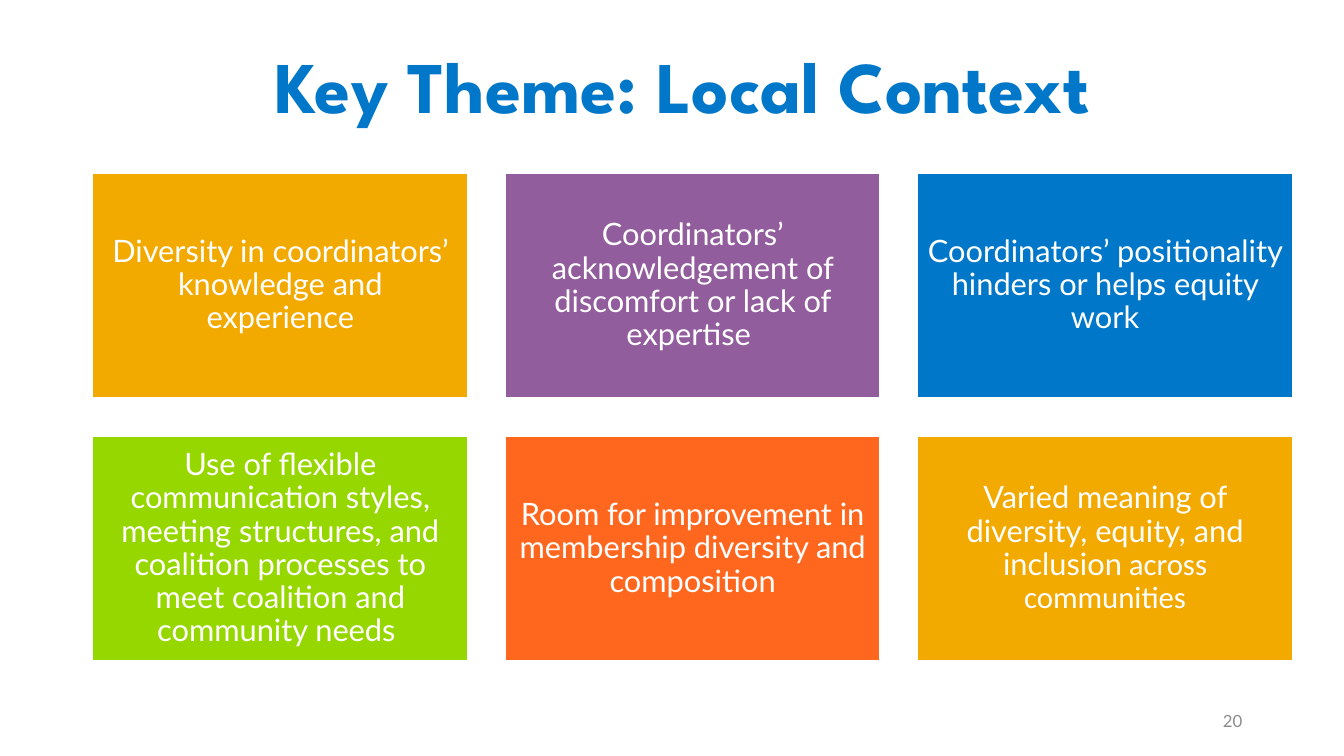
from pptx import Presentation
from pptx.dml.color import RGBColor
from pptx.enum.shapes import MSO_SHAPE
from pptx.enum.text import MSO_ANCHOR, PP_ALIGN
from pptx.util import Inches, Pt

WHITE = RGBColor(0xFF, 0xFF, 0xFF)
GRAY = RGBColor(0x8C, 0x8C, 0x8C)
AMBER = RGBColor(0xF2, 0xA9, 0x00)
PURPLE = RGBColor(0x92, 0x5D, 0x9C)
BLUE = RGBColor(0x00, 0x77, 0xC8)
GREEN = RGBColor(0x97, 0xD7, 0x00)
ORANGE = RGBColor(0xFF, 0x67, 0x1F)

# Each theme: fill colour and its (text, font) runs
THEMES = [
    (AMBER, [("Diversity in coordinators’ knowledge and experience", "Lato")]),
    (PURPLE, [("Coordinators’ acknowledgement of discomfort or lack of expertise ", "Lato")]),
    (BLUE, [("Coordinators’ positionality hinders or helps equity work", "Lato")]),
    (GREEN, [("Use of flexible communication styles, meeting structures, and "
              "coalition processes to meet coalition and community needs ", "Lato")]),
    (ORANGE, [("Room for improvement in membership diversity and composition", "Lato")]),
    (AMBER, [("Varied meaning of diversity, equity, and inclusion", "Lato"),
             (" across communities", "Calibri")]),
]


def write(sp, runs, size, color, bold=False, align=PP_ALIGN.CENTER,
          spacing=0.9, inset=None):
    """Fill a shape with one paragraph of (text, font) runs."""
    tf = sp.text_frame
    tf.word_wrap = True
    tf.vertical_anchor = MSO_ANCHOR.MIDDLE
    if inset is not None:
        tf.margin_left = tf.margin_right = Inches(inset)
        tf.margin_top = tf.margin_bottom = Inches(inset)
    p = tf.paragraphs[0]
    p.alignment = align
    p.line_spacing = spacing
    for text, font in runs:
        r = p.add_run()
        r.text = text
        r.font.name = font
        r.font.size = Pt(size)
        r.font.bold = bold
        r.font.color.rgb = color


def add_text(s, box, text, font, size, color, **fmt):
    sp = s.shapes.add_textbox(*map(Inches, box))
    write(sp, [(text, font)], size, color, **fmt)


def add_theme_grid(s, box, themes, cols=3, gap_x=0.37, gap_y=0.38):
    """Lay the theme tiles out in equal cells inside the box."""
    left, top, width, height = box
    rows = -(-len(themes) // cols)
    w = (width - gap_x * (cols - 1)) / cols
    h = (height - gap_y * (rows - 1)) / rows
    for i, (fill, runs) in enumerate(themes):
        row, col = divmod(i, cols)
        sp = s.shapes.add_shape(
            MSO_SHAPE.RECTANGLE, Inches(left + col * (w + gap_x)),
            Inches(top + row * (h + gap_y)), Inches(w), Inches(h))
        sp.shadow.inherit = False
        sp.fill.solid()
        sp.fill.fore_color.rgb = fill
        sp.line.color.rgb = WHITE
        sp.line.width = Pt(1)
        write(sp, runs, 22, WHITE, inset=0.09)


def main():
    prs = Presentation()
    prs.slide_width, prs.slide_height = Inches(13.33), Inches(7.5)
    s = prs.slides.add_slide(prs.slide_layouts[6])

    # Title
    add_text(s, (1.02, 0.27, 11.5, 1.24), "Key Theme: Local Context",
             "League Spartan", 52, BLUE, bold=True)
    # Theme tiles
    add_theme_grid(s, (0.92, 1.72, 11.9, 4.84), THEMES)
    # Slide number
    add_text(s, (9.42, 6.95, 3, 0.4), "20", "Lato", 12, GRAY,
             align=PP_ALIGN.RIGHT, spacing=1.0)

    prs.save("out.pptx")


if __name__ == "__main__":
    main()
